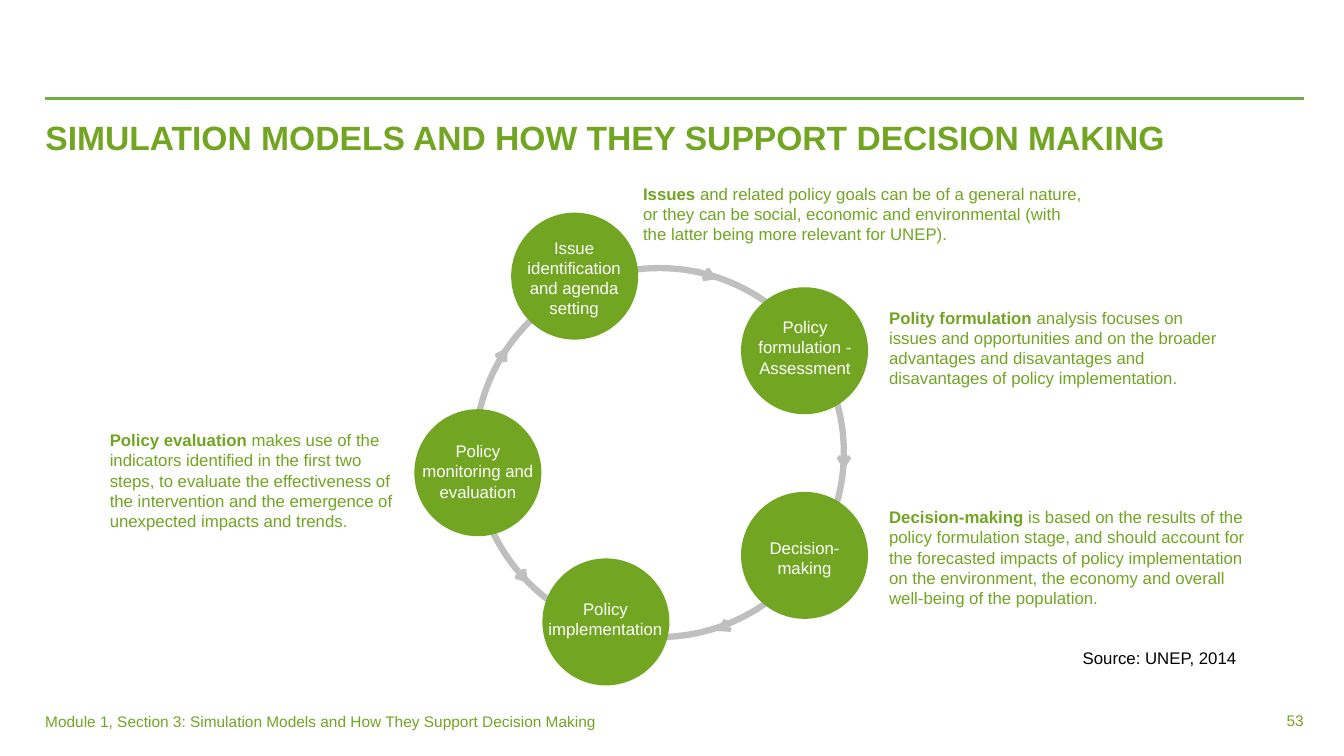
from dataclasses import dataclass

from lxml import etree
from pptx import Presentation
from pptx import util as u
from pptx.dml.color import RGBColor
from pptx.enum import shapes, text
from pptx.oxml.ns import qn

PX = 9144  # 100 px to the inch


@dataclass(frozen=True)
class Theme:
    font: str = "Arial"
    green: str = "71A522"
    rule: str = "70AD47"
    gray: str = "BFBFBF"
    white: str = "FFFFFF"
    black: str = "000000"
    title: int = 24
    body: int = 12
    footer: int = 11


THEME = Theme()
STAGE_SIZE = 126

# stage name, circle (left, top), label box (left, top, width, height)
STAGES = [
    ("Issue identification and agenda setting", (507, 211), (506, 230, 127, 91)),
    ("Policy formulation - Assessment", (735, 285), (735, 309, 127, 71)),
    ("Decision-making", (735, 488), (739, 527, 118, 53)),
    ("Policy implementation", (538, 554), (533, 578, 135, 71)),
    ("Policy monitoring and evaluation", (411, 406), (403, 432, 142, 71)),
]

# start and end of each arrow along the ring
FLOW_ARROWS = [
    (691, 268, 711, 277),
    (837, 449, 837, 466),
    (733, 614, 711, 626),
    (524, 578, 507, 559),
    (494, 360, 503, 345),
]
FLOW_ARROWS[3] = (507, 559, 524, 578)

# bold lead, remaining text, box
NOTES = [
    ("Issues ",
     "and related policy goals can be of a general nature, or they can be social, "
     "economic and environmental (with the latter being more relevant for UNEP).",
     (628, 160, 458, 104)),
    ("Polity formulation ",
     "analysis focuses on issues and opportunities and on the broader advantages and "
     "disavantages and disavantages of policy implementation.",
     (872, 293, 348, 104)),
    ("Decision-making ",
     "is based on the results of the policy formulation stage, and should account for "
     "the forecasted impacts of policy implementation on the environment, the economy "
     "and overall well-being of the population.",
     (872, 501, 387, 104)),
    ("Policy evaluation ",
     "makes use of the indicators identified in the first two steps, to evaluate the "
     "effectiveness of the intervention and the emergence of unexpected impacts and trends.",
     (99, 411, 308, 131)),
]


def emu(lengths):
    return [u.Emu(length * PX) for length in lengths]


def rgb(color):
    return RGBColor.from_string(color)


def format_run(run, size, color, bold=False):
    run.font.name = THEME.font
    run.font.size = u.Pt(size)
    run.font.bold = bold
    run.font.color.rgb = rgb(color)


def add_text(slide, box, parts, size=THEME.body, color=THEME.green,
             align=text.PP_ALIGN.LEFT, anchor=text.MSO_ANCHOR.TOP, wrap=True):
    """Add a one-paragraph text box; parts are (wording, bold) pairs."""
    shape = slide.shapes.add_textbox(*emu(box))
    frame = shape.text_frame
    frame.word_wrap = wrap
    frame.vertical_anchor = anchor
    paragraph = frame.paragraphs[0]
    paragraph.alignment = align
    for wording, bold in parts:
        run = paragraph.add_run()
        run.text = wording
        format_run(run, size, color, bold)
    return frame


def add_circle(slide, left, top, size, fill=None, line=None, width=0):
    shape = slide.shapes.add_shape(
        shapes.MSO_SHAPE.OVAL, *emu((left, top, size, size)))
    shape.shadow.inherit = False
    if fill:
        shape.fill.solid()
        shape.fill.fore_color.rgb = rgb(fill)
    else:
        shape.fill.background()
    if line:
        shape.line.color.rgb = rgb(line)
        shape.line.width = u.Pt(width)
    else:
        shape.line.fill.background()


def add_line(slide, ends, color, width, arrow=False):
    connector = slide.shapes.add_connector(
        shapes.MSO_CONNECTOR.STRAIGHT, *emu(ends))
    connector.line.color.rgb = rgb(color)
    connector.line.width = u.Pt(width)
    if arrow:
        etree.SubElement(connector.line._get_or_add_ln(), qn("a:tailEnd"), type="arrow")
    etree.SubElement(connector._element.spPr, qn("a:effectLst"))


def add_heading(slide):
    add_line(slide, (45, 98, 1293, 98), THEME.rule, 2)
    frame = add_text(
        slide, (45, 116, 1248, 52),
        [("SIMULATION MODELS AND HOW THEY SUPPORT DECISION MAKING", True)],
        THEME.title)
    frame.margin_left = frame.margin_right = 0
    frame.paragraphs[0].line_spacing = 0.9


def add_cycle(slide):
    add_circle(slide, 471, 266, 366, line=THEME.gray, width=4.5)
    for ends in FLOW_ARROWS:
        add_line(slide, ends, THEME.gray, 3, arrow=True)
    for name, corner, label_box in STAGES:
        add_circle(slide, *corner, STAGE_SIZE, fill=THEME.green)
        add_text(slide, label_box, [(name, False)], color=THEME.white,
                 align=text.PP_ALIGN.CENTER, anchor=text.MSO_ANCHOR.MIDDLE)


def add_footer(slide):
    add_text(slide, (1064, 638, 174, 30), [("Source: UNEP, 2014", False)],
             color=THEME.black, wrap=False)
    add_text(
        slide, (35, 702, 575, 40),
        [("Module 1, Section 3: Simulation Models and How They Support Decision Making",
          False)],
        THEME.footer)
    number = add_text(slide, (1182, 695, 111, 40), [("53", False)], THEME.footer,
                      align=text.PP_ALIGN.RIGHT, anchor=text.MSO_ANCHOR.MIDDLE)
    number.margin_right = 0


def main():
    presentation = Presentation()
    presentation.slide_width, presentation.slide_height = emu((1333, 750))
    slide = presentation.slides.add_slide(presentation.slide_layouts[6])
    add_heading(slide)
    add_cycle(slide)
    for lead, rest, box in NOTES:
        add_text(slide, box, [(lead, True), (rest, False)],
                 anchor=text.MSO_ANCHOR.MIDDLE)
    add_footer(slide)
    presentation.save("out.pptx")


if __name__ == "__main__":
    main()
